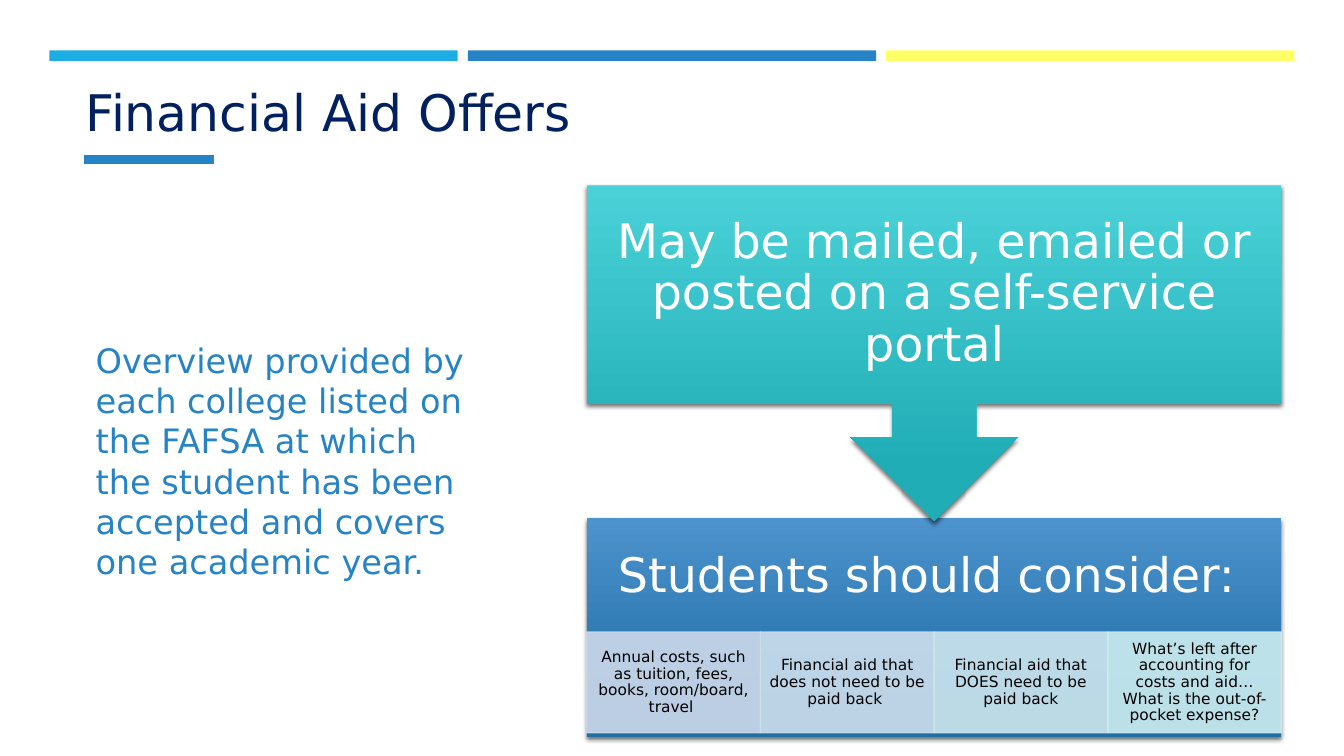
from dataclasses import dataclass

from lxml.etree import SubElement
from pptx import Presentation
from pptx.dml.color import RGBColor
from pptx.enum.shapes import MSO_CONNECTOR, MSO_SHAPE
from pptx.enum.text import MSO_ANCHOR, PP_ALIGN
from pptx.oxml.ns import qn
from pptx.util import Emu, Inches, Pt

FONT = "DejaVu Sans"
WIDTH, HEIGHT = Inches(13.33), Inches(7.5)
BLUE, NAVY, WHITE, BLACK = "2683C6", "002060", "FFFFFF", "000000"


@dataclass(frozen=True)
class Area:
    """Left and width in percent of the slide width, top and height of its height."""
    left: float
    top: float
    width: float
    height: float

    def emu(self) -> tuple[Emu, Emu, Emu, Emu]:
        return (across(self.left), down(self.top),
                across(self.width), down(self.height))


@dataclass(frozen=True)
class TextStyle:
    size: float
    color: str
    align: PP_ALIGN = PP_ALIGN.LEFT
    anchor: MSO_ANCHOR = MSO_ANCHOR.MIDDLE
    spacing: float = 0.9
    insets: tuple[float, float, float, float] = (0.1, 0.05, 0.1, 0.05)


@dataclass(frozen=True)
class Consideration:
    wording: str
    tint: str


def across(share: float) -> Emu:
    return Emu(round(WIDTH * share / 100))


def down(share: float) -> Emu:
    return Emu(round(HEIGHT * share / 100))


def rgb(color: str) -> RGBColor:
    return RGBColor.from_string(color)


def write(shape, wording: str, style: TextStyle) -> None:
    frame = shape.text_frame
    frame.word_wrap = True
    frame.vertical_anchor = style.anchor
    (frame.margin_left, frame.margin_top,
     frame.margin_right, frame.margin_bottom) = map(Inches, style.insets)
    paragraph = frame.paragraphs[0]
    paragraph.text = wording
    paragraph.alignment = style.align
    paragraph.line_spacing = style.spacing
    paragraph.font.name = FONT
    paragraph.font.size = Pt(style.size)
    paragraph.font.color.rgb = rgb(style.color)


def add_text(slide, area: Area, wording: str, style: TextStyle) -> None:
    write(slide.shapes.add_textbox(*area.emu()), wording, style)


def add_block(slide, area: Area, color: str, kind=MSO_SHAPE.RECTANGLE):
    block = slide.shapes.add_shape(kind, *area.emu())
    block.shadow.inherit = False
    block.fill.solid()
    block.fill.fore_color.rgb = rgb(color)
    block.line.fill.background()
    return block


def shade(block, light: str, dark: str) -> None:
    """Give the block a downward gradient and a soft shadow below it."""
    block.fill.gradient()
    block.fill.gradient_angle = 270
    for stop, color, position in zip(block.fill.gradient_stops, (light, dark), (0, 0.84)):
        stop.color.rgb = rgb(color)
        stop.position = position
    effects = block._element.spPr.find(qn("a:effectLst"))
    shadow = SubElement(effects, qn("a:outerShdw"), blurRad=str(Pt(3)),
                        dist=str(Pt(2)), dir="5400000", rotWithShape="0")
    tone = SubElement(shadow, qn("a:srgbClr"), val=BLACK)
    SubElement(tone, qn("a:alpha"), val="55000")


def add_consideration(slide, area: Area, item: Consideration) -> None:
    cell = add_block(slide, area, item.tint)
    cell.line.color.rgb = rgb(item.tint)
    cell.line.width = Pt(1)
    for tone in cell._element.spPr.iter(qn("a:srgbClr")):
        SubElement(tone, qn("a:alpha"), val="90000")
    write(cell, item.wording, CELL_STYLE)


def add_underline(slide, start: float, end: float, top: float) -> None:
    rule = slide.shapes.add_connector(
        MSO_CONNECTOR.STRAIGHT, across(start), down(top), across(end), down(top))
    rule.line.color.rgb = rgb(BLUE)
    rule.line.width = Pt(6.25)
    SubElement(rule._element.spPr, qn("a:effectLst"))


TITLE_STYLE = TextStyle(36, NAVY, anchor=MSO_ANCHOR.BOTTOM, insets=(0, 0.05, 0.1, 0.05))
OVERVIEW_STYLE = TextStyle(24, BLUE, anchor=MSO_ANCHOR.TOP, spacing=1)
HEADING_STYLE = TextStyle(34, WHITE, PP_ALIGN.CENTER, insets=(0.26,) * 4)
CELL_STYLE = TextStyle(11, BLACK, PP_ALIGN.CENTER, insets=(0.09, 0.02, 0.09, 0.02))

BAR_COLORS = ("1CADE4", BLUE, "FFFF66")
BAR_LEFT, BAR_PITCH, BAR_WIDTH = 3.68, 31.13, 30.38
TEXT_LEFT = 6.38
DIAGRAM_LEFT, DIAGRAM_WIDTH = 43.66, 51.69
PANEL_TOP = 68.53
CONSIDERATIONS = (
    Consideration("Annual costs, such as tuition, fees, books, room/board, travel ", "CDD9EA"),
    Consideration("Financial aid that does not need to be paid back ", "CDDFEC"),
    Consideration("Financial aid that DOES need to be paid back", "CDE5EE"),
    Consideration("What’s left after accounting for costs and aid… "
                  "What is the out-of-pocket expense?", "CDEDF0"),
)


def main() -> None:
    deck = Presentation()
    deck.slide_width, deck.slide_height = WIDTH, HEIGHT
    slide = deck.slides.add_slide(deck.slide_layouts[6])

    for column, color in enumerate(BAR_COLORS):
        add_block(slide, Area(BAR_LEFT + column * BAR_PITCH, 6.67, BAR_WIDTH, 1.4), color)
    add_underline(slide, 6.23, 15.9, 21.07)
    add_text(slide, Area(TEXT_LEFT, 7.87, 72.84, 11.6), "Financial Aid Offers", TITLE_STYLE)

    panel = add_block(slide, Area(DIAGRAM_LEFT, PANEL_TOP, DIAGRAM_WIDTH, 28.93), BLUE)
    shade(panel, "4D93CD", "206EA6")
    add_text(slide, Area(DIAGRAM_LEFT, PANEL_TOP, DIAGRAM_WIDTH, 15.6),
             "Students should consider: ", HEADING_STYLE)
    cell_width = DIAGRAM_WIDTH / len(CONSIDERATIONS)
    for column, item in enumerate(CONSIDERATIONS):
        left = DIAGRAM_LEFT + column * cell_width
        add_consideration(slide, Area(left, 83.6, cell_width, 13.33), item)

    delivery = add_block(slide, Area(DIAGRAM_LEFT, 24.53, DIAGRAM_WIDTH, 44.4),
                         "21ADB5", MSO_SHAPE.DOWN_ARROW_CALLOUT)
    shade(delivery, "4AD1D8", "21ADB5")
    write(delivery, "May be mailed, emailed or posted on a self-service portal", HEADING_STYLE)

    add_text(slide, Area(TEXT_LEFT, 44.27, 29.41, 33.6),
             "Overview provided by each college listed on the FAFSA at which "
             "the student has been accepted and covers one academic year.", OVERVIEW_STYLE)
    deck.save("out.pptx")


if __name__ == "__main__":
    main()
